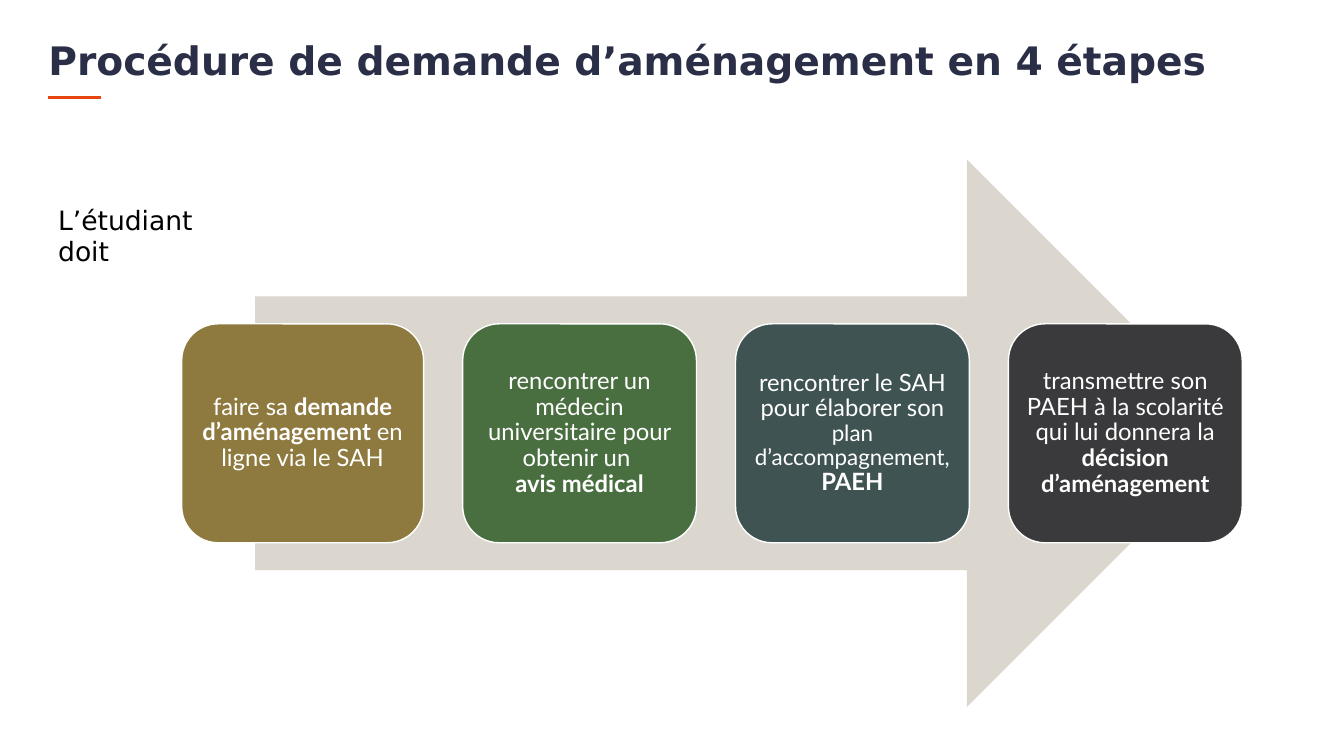
from pptx import Presentation
from pptx.dml.color import RGBColor
from pptx.enum.shapes import MSO_CONNECTOR, MSO_SHAPE
from pptx.enum.text import MSO_ANCHOR, PP_ALIGN
from pptx.oxml.ns import qn
from pptx.util import Pt

ARROW = MSO_SHAPE.RIGHT_ARROW
ROUND = MSO_SHAPE.ROUNDED_RECTANGLE
STRAIGHT = MSO_CONNECTOR.STRAIGHT
TOP, MIDDLE = MSO_ANCHOR.TOP, MSO_ANCHOR.MIDDLE
LEFT, CENTER = PP_ALIGN.LEFT, PP_ALIGN.CENTER

COLORS = {
    "navy": "2A2E46", "orange": "E74610", "sand": "DBD7CF",
    "gold": "8E7A3F", "green": "496F41", "teal": "3F5452",
    "coal": "3A3A3C", "white": "FFFFFF", "black": "000000",
}


def color(name):
    return RGBColor.from_string(COLORS[name])


def write(frame, runs, font="Lato", size=17, ink="white", bold=False,
          align=LEFT, anchor=TOP, space=1.0, pad=(7.2, 3.6)):
    """Fill a frame with runs: (text, own format) pairs, or None for a line break."""
    frame.word_wrap = True
    frame.vertical_anchor = anchor
    frame.margin_left = frame.margin_right = Pt(pad[0])
    frame.margin_top = frame.margin_bottom = Pt(pad[1])
    para = frame.paragraphs[0]
    para.alignment = align
    para.line_spacing = space
    for part in runs:
        if part is None:
            para.add_line_break()
            continue
        text, own = part
        run = para.add_run()
        run.text = text
        run.font.name = font
        run.font.size = Pt(own.get("size", size))
        run.font.bold = own.get("bold", bold)
        run.font.color.rgb = color(ink)


class Deck:
    def __init__(self, font, width, height):
        self.font = font
        self.file = Presentation()
        self.file.slide_width, self.file.slide_height = Pt(width), Pt(height)
        self.slide = self.file.slides.add_slide(self.file.slide_layouts[6])

    def label(self, box, text, **style):
        item = self.slide.shapes.add_textbox(*map(Pt, box))
        write(item.text_frame, [(text, {})], font=self.font, **style)

    def rule(self, x, y, end, ink, width):
        line = self.slide.shapes.add_connector(
            STRAIGHT, Pt(x), Pt(y), Pt(end), Pt(y))
        line.line.color.rgb = color(ink)
        line.line.width = Pt(width)
        props = line._element.spPr
        props.append(props.makeelement(qn("a:effectLst"), {}))

    def shape(self, kind, box, fill, edge=None):
        item = self.slide.shapes.add_shape(kind, *map(Pt, box))
        item.shadow.inherit = False
        item.fill.solid()
        item.fill.fore_color.rgb = color(fill)
        if edge:
            item.line.color.rgb = color(edge)
            item.line.width = Pt(1)
        else:
            item.line.fill.background()
        return item

    def step(self, box, fill, runs, side):
        card = self.shape(ROUND, box, fill, "white")
        write(card.text_frame, runs, align=CENTER, anchor=MIDDLE,
              space=0.9, pad=(side, 5))


BOLD = {"bold": True}
STEPS = [
    ("gold", 172.8, 5, [("faire sa ", {}), ("demande d’aménagement ", BOLD),
                        ("en ligne via le SAH", {})]),
    ("green", 167, 5, [
        ("rencontrer un médecin universitaire pour obtenir un ", {}),
        None, ("avis médical", BOLD)]),
    ("teal", 167, 0, [("rencontrer le SAH pour élaborer son ", {}),
                      ("plan d’accompagnement, ", {"size": 16}),
                      ("PAEH", BOLD)]),
    ("coal", 167, 5, [
        ("transmettre son PAEH à la scolarité qui lui donnera la ", {}),
        ("décision d’aménagement", BOLD)]),
]
GAP = 27.9


def main():
    deck = Deck("DejaVu Sans", 960, 540)
    deck.label((27.5, 26.5, 844.5, 43),
               "Procédure de demande d’aménagement en 4 étapes",
               size=28, ink="navy", bold=True, space=0.9)
    deck.rule(34.5, 69.4, 72, "orange", 2.25)
    deck.shape(ARROW, (182.2, 114, 704, 391), "sand")
    left = 129.8
    for fill, width, side, runs in STEPS:
        deck.step((left, 231.3, width, 156.4), fill, runs, side)
        left += width + GAP
    deck.label((34.5, 141.8, 150, 54), "L’étudiant doit", size=19, ink="black")
    deck.file.save("out.pptx")


if __name__ == "__main__":
    main()
